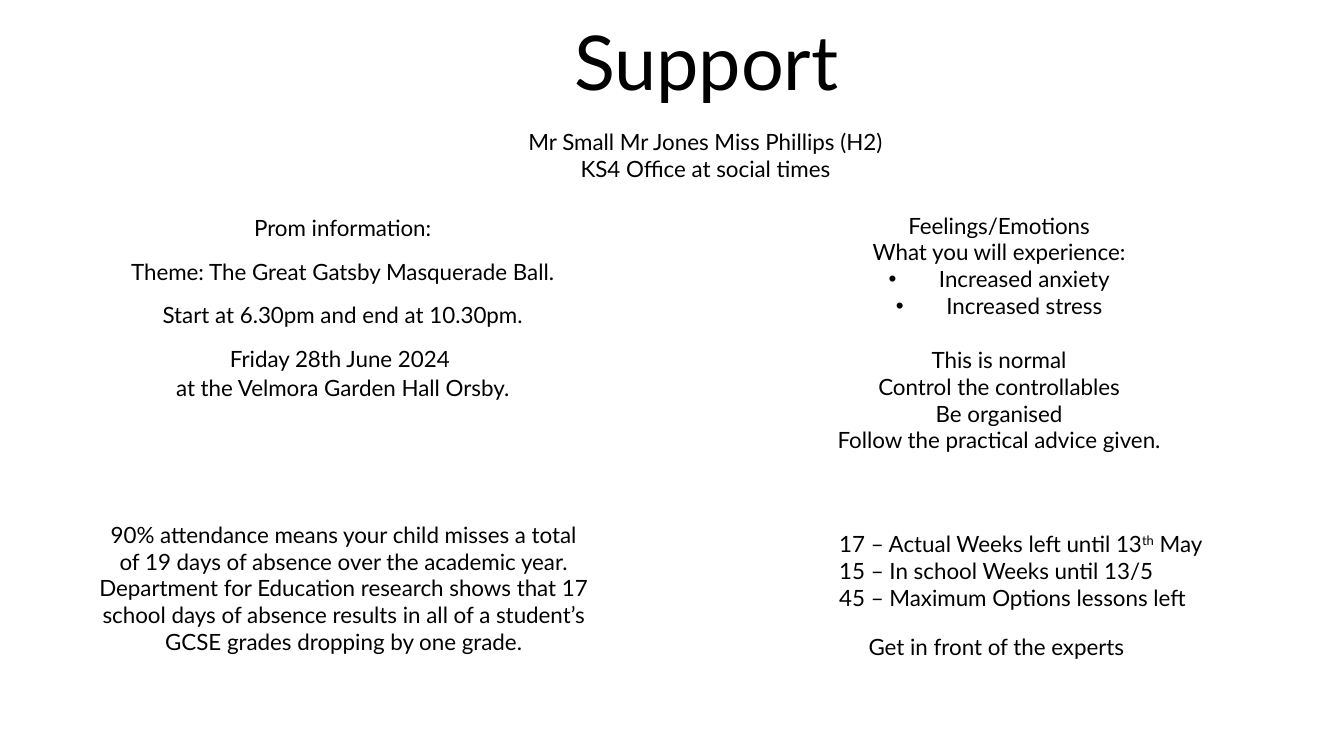
from lxml import etree
from pptx import Presentation
from pptx.dml.color import RGBColor
from pptx.enum import shapes, text
from pptx.oxml.ns import qn
from pptx.util import Cm, Pt

BLACK = RGBColor(0x00, 0x00, 0x00)
WHITE = RGBColor(0xFF, 0xFF, 0xFF)
FONT = "Lato"
BODY_SIZE = 16
BLANK_LINE = 19.2  # one body line, in points
CENTER, LEFT = text.PP_ALIGN.CENTER, text.PP_ALIGN.LEFT

# Content: each paragraph is a list of runs; places are left, top, width, height in cm
TITLE, TITLE_PLACE = "Support", (3.18, 0.25, 29.24, 2.57)
FEELINGS = ["Feelings/Emotions", "What you will experience:",
            "Increased anxiety", "Increased stress", "This is normal",
            "Control the controllables", "Be organised",
            "Follow the practical advice given."]
BULLETED = {"Increased anxiety", "Increased stress"}
AFTER_GAP = {"This is normal"}
STAFF = ["Mr Small Mr Jones Miss Phillips (H2)", "KS4 Office at social times"]
WEEKS = [("17 – Actual Weeks left until 13", "th", " May"),
         "15 – In school Weeks until 13/5",
         "45 – Maximum Options lessons left"]
SUPERSCRIPT = {"th"}
ATTENDANCE = [
    "90% attendance means your child misses a total of 19 days of absence "
    "over the academic year.",
    "Department for Education research shows that 17 school days of absence "
    "results in all of a student’s GCSE grades dropping by one grade."]
EXPERTS = ["Get in front of the experts "]
PROM = ["Prom information:", "Theme: The Great Gatsby Masquerade Ball.",
        "Start at 6.30pm and end at 10.30pm.",
        "Friday 28th June 2024 \nat the Velmora Garden Hall Orsby."]

# Paragraphs, place, kind, alignment, line spacing, space before (pt)
BLOCKS = [
    (FEELINGS, (20.75, 5.21, 8.86, 6.4), "outlined", CENTER, 1.0, 0),
    (STAFF, (12.19, 3.1, 11.18, 1.63), "panel", CENTER, 1.0, 0),
    (WEEKS, (20.9, 13.23, 11.68, 2.31), "plain", LEFT, 1.0, 0),
    (ATTENDANCE, (2.24, 13, 12.85, 4.37), "plain", CENTER, 1.0, 0),
    (EXPERTS, (17.55, 15.82, 15.27, 0.94), "panel", CENTER, 1.0, 0),
    (PROM, (3.05, 5.21, 11.18, 4.62), "plain", CENTER, 1.1, 10),
]


def add_run(paragraph, words, size=BODY_SIZE):
    run = paragraph.add_run()
    run.text = words
    run.font.name, run.font.size = FONT, Pt(size)
    run.font.color.rgb = BLACK
    if words in SUPERSCRIPT:
        run.font._element.set("baseline", "30000")


def add_bullet(paragraph):
    properties = paragraph._p.get_or_add_pPr()
    properties.set("marL", str(Cm(1.27)))
    properties.set("indent", str(-Cm(1.27)))
    etree.SubElement(properties, qn("a:buFont")).set("typeface", "Arial")
    etree.SubElement(properties, qn("a:buChar")).set("char", "•")


def add_block(slide, paragraphs, place, kind, align, spacing, before):
    box = [Cm(length) for length in place]
    if kind == "plain":
        block = slide.shapes.add_textbox(*box)
    else:
        block = slide.shapes.add_shape(shapes.MSO_SHAPE.RECTANGLE, *box)
        block.shadow.inherit = False
        block.fill.solid()
        block.fill.fore_color.rgb = WHITE
        if kind == "outlined":
            block.line.color.rgb = WHITE
            block.line.width = Pt(0.75)
        else:
            block.line.fill.background()
    frame = block.text_frame
    frame.word_wrap = True
    frame.vertical_anchor = text.MSO_ANCHOR.TOP
    for number, content in enumerate(paragraphs):
        paragraph = frame.add_paragraph() if number else frame.paragraphs[0]
        paragraph.alignment = align
        paragraph.line_spacing = spacing
        paragraph.space_before = Pt(BLANK_LINE if content in AFTER_GAP else before)
        if content in BULLETED:
            add_bullet(paragraph)
        for words in (content,) if isinstance(content, str) else content:
            for part, line in enumerate(words.split("\n")):
                if part:
                    paragraph.add_line_break()
                add_run(paragraph, line)


def main():
    deck = Presentation()
    deck.slide_width, deck.slide_height = Cm(33.87), Cm(19.05)
    slide = deck.slides.add_slide(deck.slide_layouts.get_by_name("Title Only"))

    # Title
    title = slide.shapes.title
    title.left, title.top, title.width, title.height = map(Cm, TITLE_PLACE)
    title.text_frame.vertical_anchor = text.MSO_ANCHOR.TOP
    heading = title.text_frame.paragraphs[0]
    heading.alignment = CENTER
    add_run(heading, TITLE, 54)

    # Information blocks
    for block in BLOCKS:
        add_block(slide, *block)

    deck.save("out.pptx")


if __name__ == "__main__":
    main()
